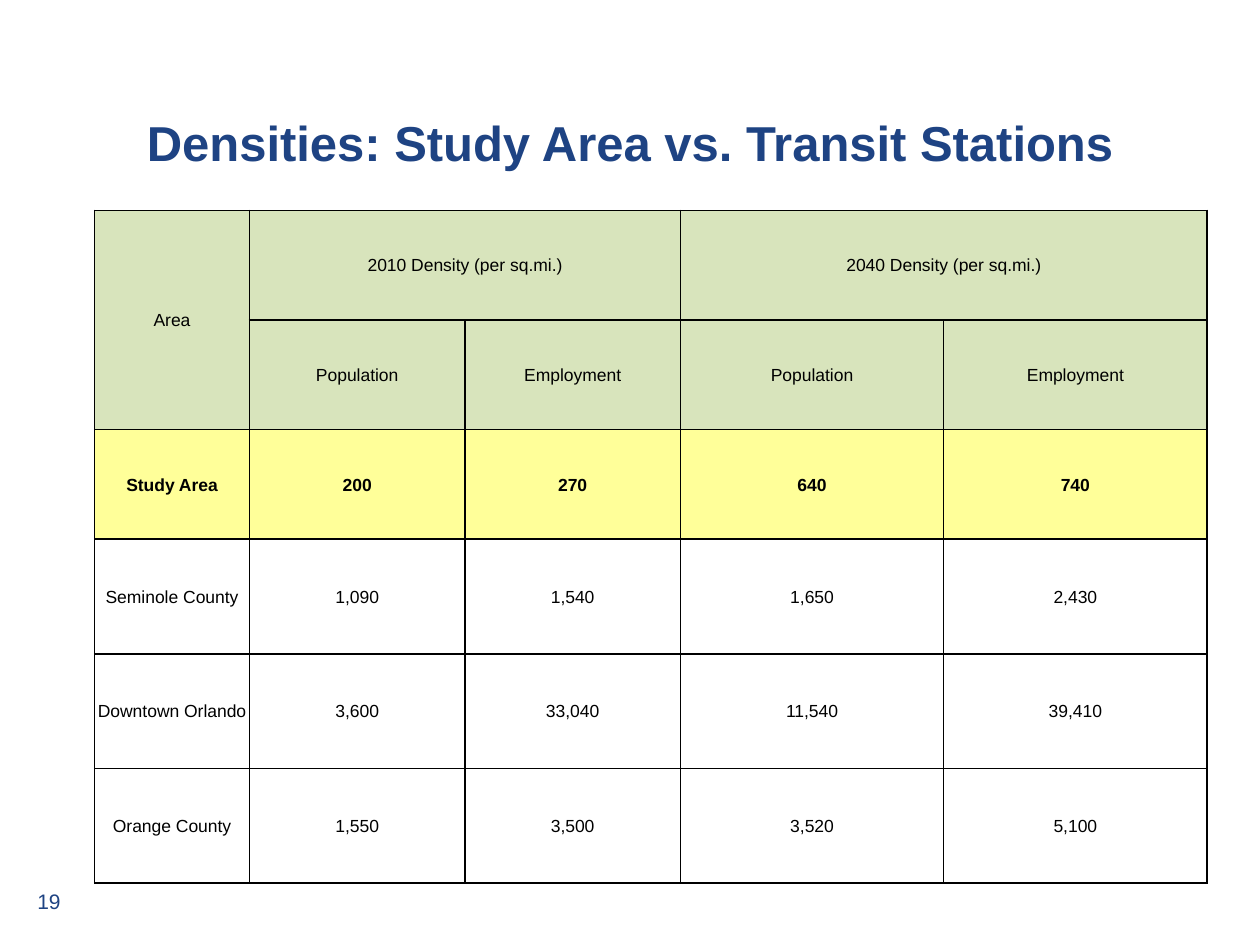
from lxml import etree
from pptx import Presentation
from pptx.dml.color import RGBColor
from pptx.enum.text import MSO_ANCHOR, MSO_AUTO_SIZE, PP_ALIGN
from pptx.oxml.ns import qn
from pptx.util import Inches, Pt

CENTER, RIGHT = PP_ALIGN.CENTER, PP_ALIGN.RIGHT
TOP, MIDDLE = MSO_ANCHOR.TOP, MSO_ANCHOR.MIDDLE
NO_AUTOFIT = MSO_AUTO_SIZE.NONE

TITLE = "Densities: Study Area vs. Transit Stations"
PAGE_NUMBER = "19"
ROWS = [
    ("Area", "2010 Density (per sq.mi.)", "", "2040 Density (per sq.mi.)", ""),
    ("", "Population", "Employment", "Population", "Employment"),
    ("Study Area", "200", "270", "640", "740"),
    ("Seminole County", "1,090", "1,540", "1,650", "2,430"),
    ("Downtown Orlando", "3,600", "33,040", "11,540", "39,410"),
    ("Orange County", "1,550", "3,500", "3,520", "5,100"),
]
MERGES = [((0, 0), (1, 0)), ((0, 1), (0, 2)), ((0, 3), (0, 4))]
COLUMN_WIDTHS = [1.23, 1.71, 1.71, 2.09, 2.09]
ROW_HEIGHTS = [0.87] * 3 + [0.91] * 3
HEADER, HIGHLIGHT, WHITE = "D8E4BC", "FFFF99", "FFFFFF"
ROW_FILLS = [HEADER] * 2 + [HIGHLIGHT] + [WHITE] * 3
NAVY, BLACK = "1E4383", "000000"


def color(hex_value):
    return RGBColor.from_string(hex_value)


def style_text(frame, size, hex_value, align, bold=False):
    para = frame.paragraphs[0]
    para.alignment = align
    for span in para.runs:
        span.font.name = "Arial"
        span.font.size = Pt(size)
        span.font.bold = bold
        span.font.color.rgb = color(hex_value)


def add_borders(cell, hex_value, width):
    """Draw all four cell borders; the schema wants them before the fill."""
    properties = cell._tc.get_or_add_tcPr()
    for position, side in enumerate(("a:lnL", "a:lnR", "a:lnT", "a:lnB")):
        line = etree.Element(qn(side), w=str(Pt(width)))
        fill = etree.SubElement(line, qn("a:solidFill"))
        etree.SubElement(fill, qn("a:srgbClr"), val=hex_value)
        properties.insert(position, line)


def add_title(page):
    title = page.shapes.title
    title.left, title.top = Inches(-0.25), Inches(0.92)
    title.width, title.height = Inches(10.5), Inches(0.58)
    frame = title.text_frame
    frame.text = TITLE
    frame.auto_size = NO_AUTOFIT
    frame.vertical_anchor = TOP
    frame.paragraphs[0].line_spacing = Pt(28)
    style_text(frame, 28, NAVY, CENTER, bold=True)


def add_page_number(page):
    box = page.shapes.add_textbox(Inches(0.08), Inches(7), Inches(0.5), Inches(0.3))
    box.text_frame.word_wrap = True
    box.text_frame.text = PAGE_NUMBER
    style_text(box.text_frame, 12, NAVY, RIGHT)


def add_density_table(page):
    table = page.shapes.add_table(
        len(ROWS), len(COLUMN_WIDTHS), Inches(0.75), Inches(1.67),
        Inches(sum(COLUMN_WIDTHS)), Inches(sum(ROW_HEIGHTS))).table
    for column, width in zip(table.columns, COLUMN_WIDTHS):
        column.width = Inches(width)
    for row, height in zip(table.rows, ROW_HEIGHTS):
        row.height = Inches(height)
    for start, end in MERGES:
        table.cell(*start).merge(table.cell(*end))
    for row, texts, fill in zip(table.rows, ROWS, ROW_FILLS):
        for cell, text in zip(row.cells, texts):
            cell.fill.solid()
            cell.fill.fore_color.rgb = color(fill)
            add_borders(cell, BLACK, 1)
            cell.vertical_anchor = MIDDLE
            cell.margin_left = cell.margin_right = cell.margin_top = Inches(0.01)
            cell.margin_bottom = 0
            if text:
                cell.text_frame.text = text
                style_text(cell.text_frame, 10, BLACK, CENTER, bold=fill == HIGHLIGHT)


def main():
    deck = Presentation()
    deck.slide_width, deck.slide_height = Inches(10), Inches(7.5)
    page = deck.slides.add_slide(deck.slide_layouts[5])
    add_page_number(page)
    add_title(page)
    add_density_table(page)
    deck.save("out.pptx")


if __name__ == "__main__":
    main()
